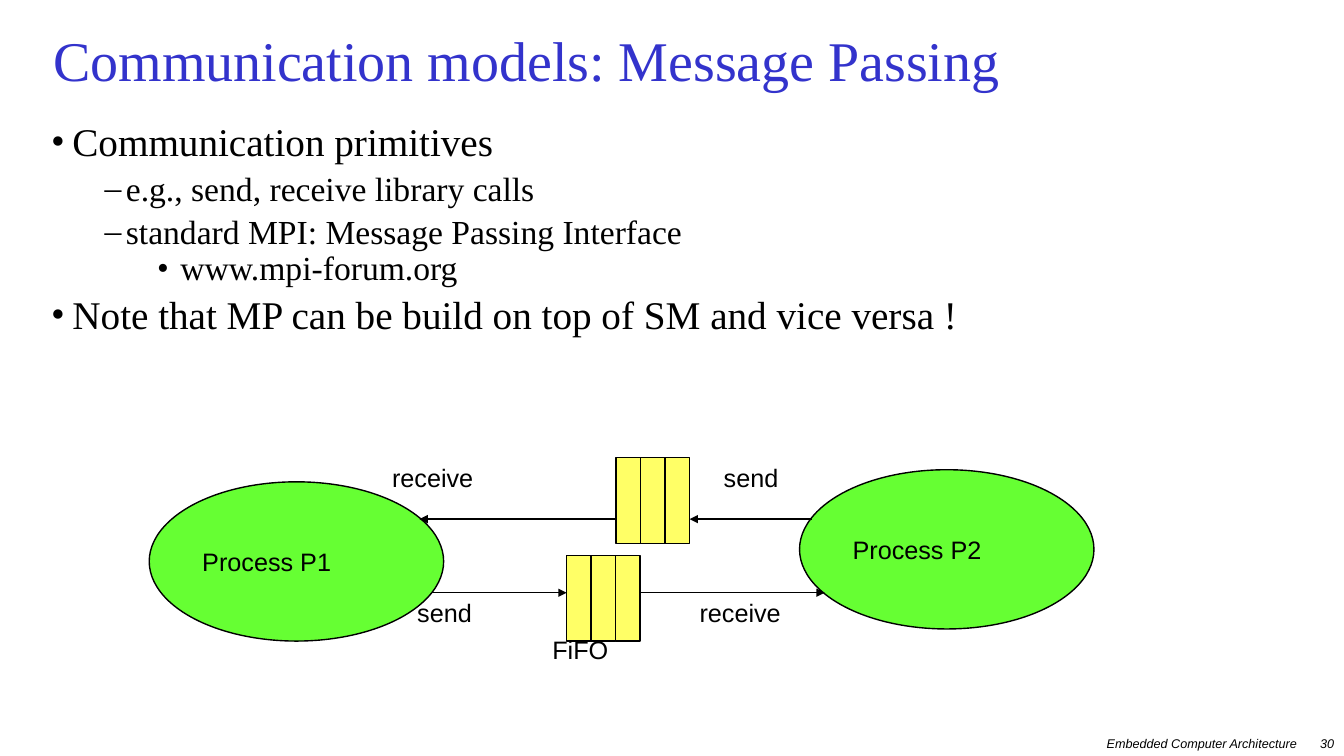
from dataclasses import dataclass

from lxml.etree import SubElement
from pptx import Presentation
from pptx.dml.color import RGBColor
from pptx.enum.shapes import MSO_CONNECTOR, MSO_SHAPE
from pptx.enum.text import MSO_ANCHOR, PP_ALIGN
from pptx.oxml.ns import qn
from pptx.util import Inches, Pt


@dataclass(frozen=True)
class Theme:
    serif: str = "Times New Roman"
    sans: str = "Arial"
    ink: str = "000000"
    heading: str = "3333CC"
    process: str = "66FF33"
    queue: str = "FFFF66"
    title_size: int = 40
    level_sizes: tuple = (28, 24, 24)
    label_size: int = 18
    footer_size: int = 9
    line_width: int = 1


THEME = Theme()

# Per level: bullet, text indent, hanging indent (inches), space before (points)
LEVELS = (("•", 0.21, 0.21, 5.6), ("–", 0.74, 0.21, 5), ("•", 1.28, 0.23, 0))

POINTS = (
    (0, "Communication primitives"),
    (1, "e.g., send, receive library calls"),
    (1, "standard MPI: Message Passing Interface"),
    (2, "www.mpi-forum.org"),
    (0, "Note that MP can be build on top of SM and vice versa !"),
)


def add_span(para, text, font, size, color=THEME.ink, italic=False):
    span = para.add_run()
    span.text = text
    span.font.name = font
    span.font.size = Pt(size)
    span.font.italic = italic
    span.font.color.rgb = RGBColor.from_string(color)


def add_text_frame(page, left, top, width, height):
    box = page.shapes.add_textbox(Inches(left), Inches(top), Inches(width), Inches(height))
    box.text_frame.word_wrap = True
    return box.text_frame


def add_label(page, text, left, top, width=1.47):
    frame = add_text_frame(page, left, top, width, 0.59)
    add_span(frame.paragraphs[0], text, THEME.sans, THEME.label_size)


def add_outlined(page, kind, fill, left, top, width, height):
    shape = page.shapes.add_shape(kind, Inches(left), Inches(top), Inches(width), Inches(height))
    shape.shadow.inherit = False
    shape.fill.solid()
    shape.fill.fore_color.rgb = RGBColor.from_string(fill)
    shape.line.color.rgb = RGBColor.from_string(THEME.ink)
    shape.line.width = Pt(THEME.line_width)
    return shape


def add_process(page, name, left, top):
    ellipse = add_outlined(page, MSO_SHAPE.OVAL, THEME.process, left, top, 2.92, 1.58)
    frame = ellipse.text_frame
    frame.word_wrap = True
    frame.vertical_anchor = MSO_ANCHOR.MIDDLE
    para = frame.paragraphs[0]
    para.alignment = PP_ALIGN.LEFT
    add_span(para, name, THEME.sans, THEME.label_size)


def add_queue(page, left, top, width, height, slots=3):
    slot = width / slots
    for index in range(slots):
        add_outlined(page, MSO_SHAPE.RECTANGLE, THEME.queue,
                     left + index * slot, top, slot, height)


def add_arrow(page, start, end, y):
    arrow = page.shapes.add_connector(
        MSO_CONNECTOR.STRAIGHT, Inches(start), Inches(y), Inches(end), Inches(y))
    arrow.line.color.rgb = RGBColor.from_string(THEME.ink)
    arrow.line.width = Pt(THEME.line_width)
    SubElement(arrow.line._get_or_add_ln(), qn("a:tailEnd"), type="triangle")
    SubElement(arrow._element.spPr, qn("a:effectLst"))


def build_title(page, left, top, width, height):
    frame = add_text_frame(page, left, top, width, height)
    frame.vertical_anchor = MSO_ANCHOR.MIDDLE
    para = frame.paragraphs[0]
    para.line_spacing = 0.8
    add_span(para, "Communication models: Message Passing",
             THEME.serif, THEME.title_size, THEME.heading)


def build_body(page, left, top, width, height):
    frame = add_text_frame(page, left, top, width, height)
    for index, (level, text) in enumerate(POINTS):
        para = frame.add_paragraph() if index else frame.paragraphs[0]
        bullet, indent, hanging, before = LEVELS[level]
        para.level = level
        para.line_spacing = 0.9
        para.space_before = Pt(before)
        # Hanging bullet
        properties = para._p.get_or_add_pPr()
        properties.set("marL", str(Inches(indent)))
        properties.set("indent", str(-Inches(hanging)))
        SubElement(properties, qn("a:buFont"), typeface=THEME.serif)
        SubElement(properties, qn("a:buChar"), char=bullet)
        add_span(para, text, THEME.serif, THEME.level_sizes[level])


def build_diagram(page, left, top):
    # The two processes
    add_process(page, "Process P1", left, top + 0.24)
    add_process(page, "Process P2", left + 6.45, top + 0.12)

    # A queue for each direction
    queue_width, queue_height = 0.73, 0.85
    lower, upper = left + 4.14, left + 4.63
    add_queue(page, lower, top + 0.97, queue_width, queue_height)
    add_queue(page, upper, top, queue_width, queue_height)

    # Messages from P1 to P2 below, from P2 to P1 above
    upper_y, lower_y = top + 0.61, top + 1.34
    add_arrow(page, left + 2.8, lower, lower_y)
    add_arrow(page, lower + queue_width, left + 6.7, lower_y)
    add_arrow(page, left + 6.57, upper + queue_width, upper_y)
    add_arrow(page, upper, left + 2.68, upper_y)

    # Labels
    add_label(page, "receive", left + 2.31, top)
    add_label(page, "send", left + 5.6, top)
    add_label(page, "send", left + 2.56, lower_y)
    add_label(page, "receive", left + 5.36, lower_y)
    add_label(page, "FiFO", left + 3.9, top + 1.7)


def build_footer(page, left, top, width, height):
    number_width = 0.5
    name_width = width - 0.37
    parts = (("Embedded Computer Architecture", left, name_width),
             ("30", left + width - number_width, number_width))
    for text, part_left, part_width in parts:
        frame = add_text_frame(page, part_left, top, part_width, height)
        para = frame.paragraphs[0]
        para.alignment = PP_ALIGN.RIGHT
        add_span(para, text, THEME.sans, THEME.footer_size, italic=True)


def main():
    deck = Presentation()
    deck.slide_width, deck.slide_height = Inches(13.33), Inches(7.5)
    page = deck.slides.add_slide(deck.slide_layouts[6])
    build_footer(page, 9.5, 7.25, 3.83, 0.25)
    build_title(page, 0.43, 0.25, 12.46, 0.8)
    build_body(page, 0.41, 1.17, 12.52, 6.33)
    build_diagram(page, 1.48, 4.54)
    deck.save("out.pptx")


if __name__ == "__main__":
    main()
